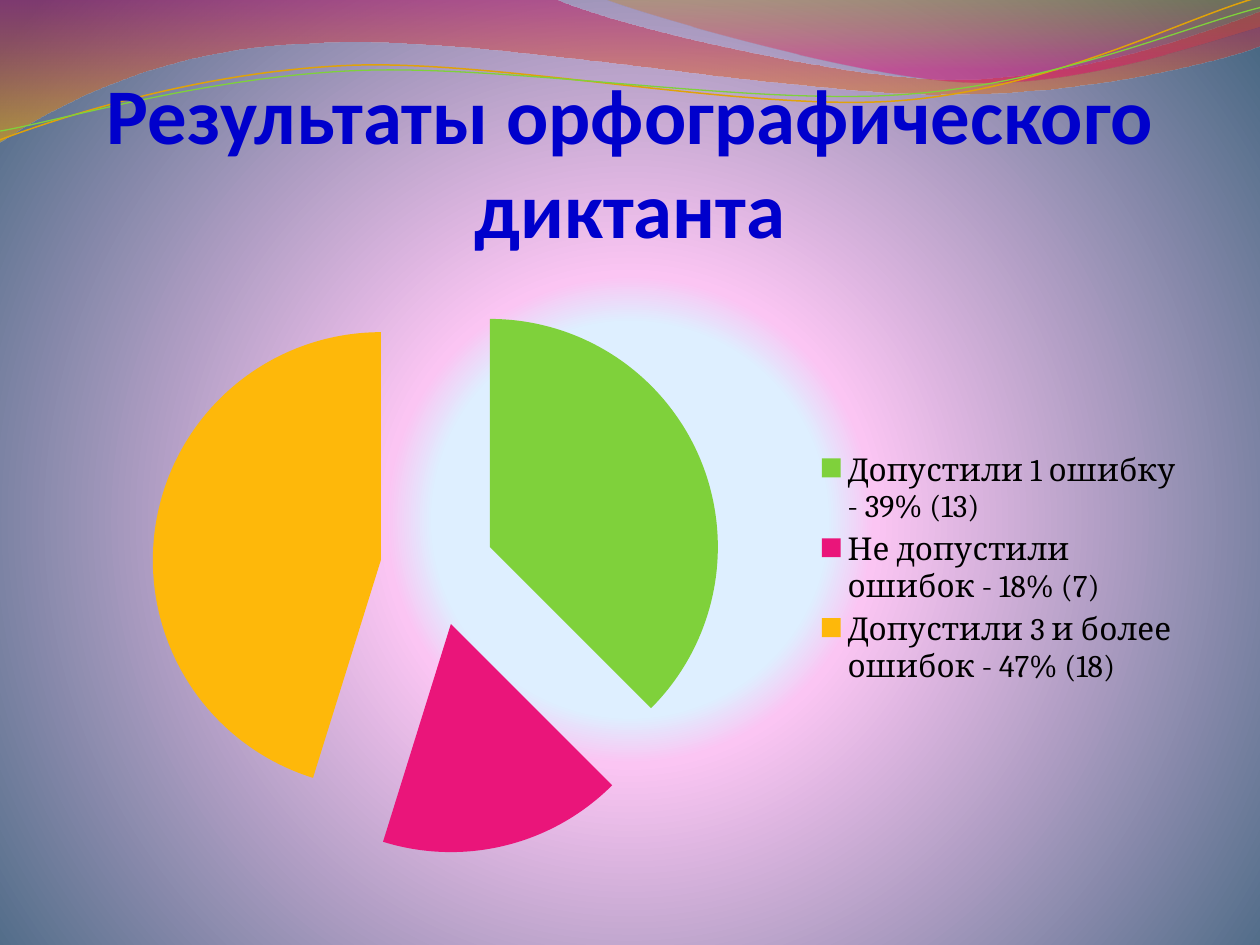
from pptx import Presentation
from pptx.chart.data import CategoryChartData
from pptx.dml.color import RGBColor
from pptx.enum.chart import XL_CHART_TYPE, XL_LEGEND_POSITION
from pptx.enum.text import MSO_ANCHOR, MSO_AUTO_SIZE, PP_ALIGN
from pptx.oxml import parse_xml
from pptx.oxml.ns import nsdecls, qn
from pptx.util import Pt

PIE = XL_CHART_TYPE.PIE
RIGHT = XL_LEGEND_POSITION.RIGHT
BOTTOM = MSO_ANCHOR.BOTTOM
FIXED = MSO_AUTO_SIZE.NONE
CENTER = PP_ALIGN.CENTER

HUES = {
    "sky": "DEEFFF", "rose": "FBC5F3", "slate": "4A6984",
    "wine": "BD0059", "amber": "F0AB00", "ochre": "C38B00", "ruby": "E1006B",
    "orange": "E0A209", "green": "7FD13B", "pink": "EA157A", "gold": "FEB80A",
    "blue": "0000CC", "black": "000000",
}
DOWN = '<a:lin ang="5400000" scaled="0"/>'
ROUND = ('<a:path path="circle">'
         '<a:fillToRect l="10000" t="110000" r="10000" b="100000"/></a:path>')


def grad(stops, aim):
    """Return a gradient fill from (percent, hue, opacity) stops."""
    marks = "".join(
        f'<a:gs pos="{at * 1000}"><a:srgbClr val="{HUES[hue]}">'
        f'<a:alpha val="{alpha * 1000}"/></a:srgbClr></a:gs>'
        for at, hue, alpha in stops)
    return parse_xml(f'<a:gradFill {nsdecls("a")} rotWithShape="1">'
                     f'<a:gsLst>{marks}</a:gsLst>{aim}</a:gradFill>')


def write(frame, text, font, size, hue, bold=False, align=CENTER):
    para = frame.paragraphs[0]
    para.alignment = align
    run = para.add_run()
    run.text = text
    run.font.name = font
    run.font.size = Pt(size)
    run.font.bold = bold
    run.font.color.rgb = RGBColor.from_string(HUES[hue])


deck = Presentation()
deck.slide_width, deck.slide_height = Pt(720), Pt(540)
slide = deck.slides.add_slide(deck.slide_layouts[5])
shapes = slide.shapes

# Background
slide.background.fill.solid()
plain = slide.background._cSld.find(".//" + qn("a:solidFill"))
plain.getparent().replace(plain, grad(
    [(25, "sky", 100), (31, "rose", 100), (100, "slate", 100)], ROUND))

# Waves: a pair is a straight step, six numbers are a Bezier curve
waves = [
    ((0, 0), [(316.8, -0.7),
              (342.7, 12.2, 478.1, 45.4, 545.8, 45.4),
              (614.2, 45.4, 689.8, 18.7, 720, 6.5),
              (720.7, 25.9),
              (707.8, 31.7, 626.4, 54.7, 537.1, 54),
              (447.8, 54, 275, 20.2, 185, 24.5),
              (92.9, 25.9, 33.1, 59.8, -0.7, 81.4)],
     [(0, "wine", 45), (100, "amber", 55)], None),
    ((344.9, -0.7), [(366.5, 7.9, 491, 44.6, 553.7, 46.8),
                     (616.3, 49.7, 691.9, 23, 720, 15.1),
                     (720, 0)],
     [(0, "ochre", 30), (80, "ruby", 45)], None),
    ((0, 79.9), [(34.6, 67, 113.8, 41, 199.4, 37.4),
                 (284.4, 33.8, 427, 64.1, 513.4, 57.6),
                 (599.8, 51.1, 675.4, 10.8, 718.6, -1.4)],
     None, ("orange", 0.85)),
    ((0, 74.9), [(33.8, 69.1, 118.1, 43.9, 203.8, 40.3),
                 (290.2, 36.7, 429.8, 60.5, 516.2, 54),
                 (601.9, 48.2, 677.5, 15.1, 720, 4.3)],
     None, ("green", 0.75)),
]
for start, moves, stops, line in waves:
    dots = [(Pt(x), Pt(y)) for move in moves
            for x, y in zip(move[::2], move[1::2])]
    pen = shapes.build_freeform(Pt(start[0]), Pt(start[1]))
    pen.add_line_segments(dots, close=bool(stops))
    wave = pen.convert_to_shape()
    # Join the three points of each curve into one Bezier step
    legs = iter(wave._element.findall(".//" + qn("a:lnTo")))
    for move in moves:
        leg = next(legs)
        if len(move) == 6:
            curve = parse_xml(f'<a:cubicBezTo {nsdecls("a")}/>')
            leg.addprevious(curve)
            for part in (leg, next(legs), next(legs)):
                curve.append(part[0])
                part.getparent().remove(part)
    wave.shadow.inherit = False
    wave.fill.background()
    if stops:
        wave.line.fill.background()
        blank = wave._element.spPr.find(qn("a:noFill"))
        blank.getparent().replace(blank, grad(stops, DOWN))
    else:
        wave.line.color.rgb = RGBColor.from_string(HUES[line[0]])
        wave.line.width = Pt(line[1])

# Title, in front of the waves
title = shapes.title
shapes._spTree.append(title._element)
title.left, title.top, title.width, title.height = (
    Pt(36), Pt(55.4), Pt(648), Pt(90))
frame = title.text_frame
frame.word_wrap = True
frame.auto_size = FIXED
frame.vertical_anchor = BOTTOM
frame.margin_left = frame.margin_right = frame.margin_bottom = 0
frame.margin_top = Pt(3.6)
write(frame, "Результаты орфографического диктанта",
      font="Calibri", size=45, hue="blue", bold=True)

# Pie of results
data = CategoryChartData()
data.categories = ["Допустили 1 ошибку - 39% (13)",
                   "Не допустили ошибок - 18% (7)",
                   "Допустили 3 и более ошибок - 47% (18)"]
data.add_series("Series 1", (39, 18, 47))
chart = shapes.add_chart(
    PIE, Pt(36), Pt(152.25), Pt(648), Pt(345.6), data).chart
chart.has_title = False
chart.font.name = "Cambria"
chart.font.size = Pt(18)
chart.font.color.rgb = RGBColor.from_string(HUES["black"])
chart.has_legend = True
chart.legend.position = RIGHT
chart.legend.include_in_layout = False
plot = chart.plots[0]
plot.vary_by_categories = True
pie = plot.series[0]
for spot, hue in enumerate(("green", "pink", "gold")):
    fill = pie.points[spot].format.fill
    fill.solid()
    fill.fore_color.rgb = RGBColor.from_string(HUES[hue])
pie._element.find(qn("c:dPt")).addprevious(
    parse_xml(f'<c:explosion {nsdecls("c")} val="25"/>'))

deck.save("out.pptx")
